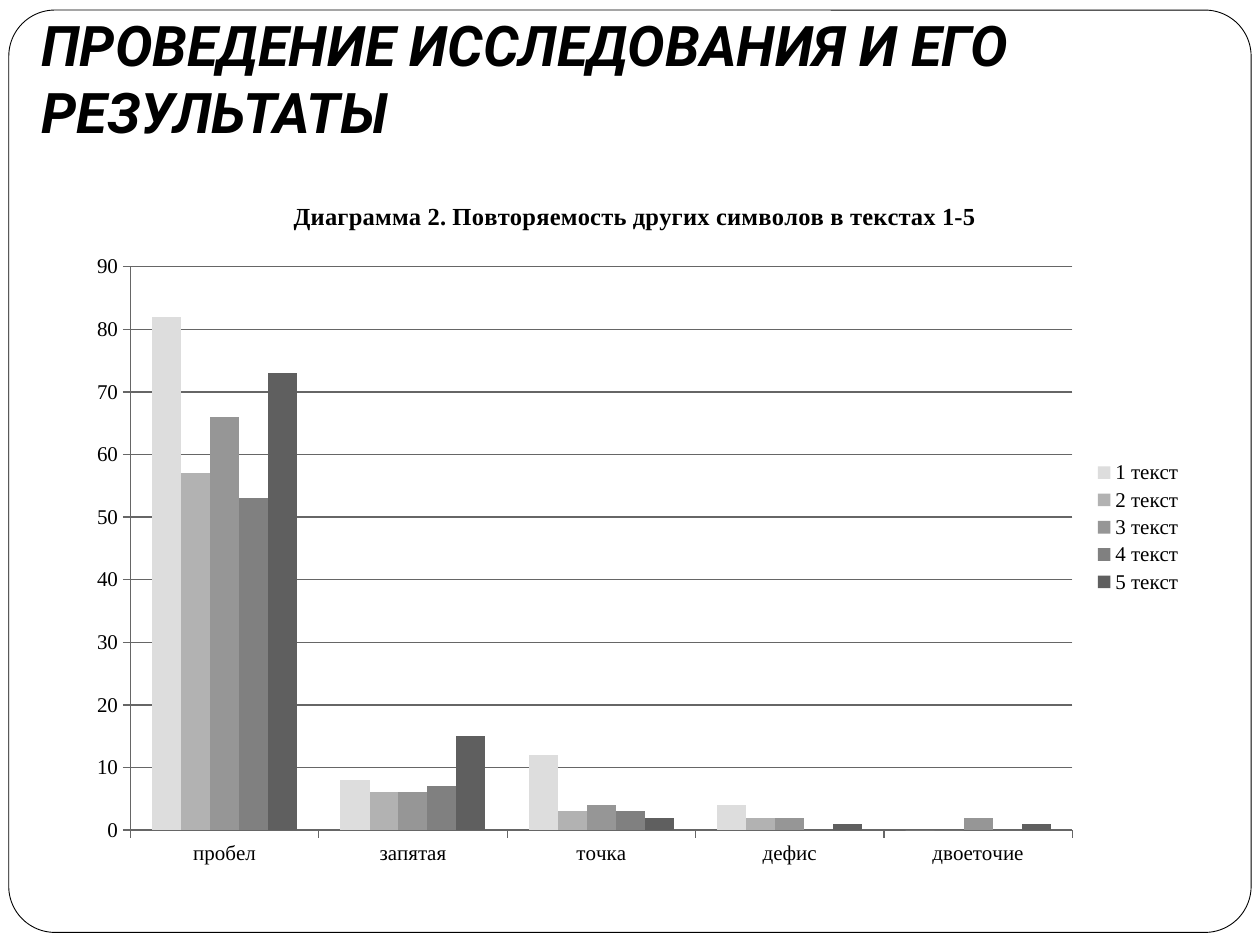
from lxml import etree
from pptx import Presentation
from pptx.chart.data import CategoryChartData as ChartData
from pptx.dml.color import RGBColor as RGB
from pptx.enum.chart import (XL_CHART_TYPE as Kind, XL_LEGEND_POSITION as Side,
                             XL_TICK_MARK as Tick)
from pptx.enum.shapes import MSO_SHAPE as Preset
from pptx.enum.text import MSO_ANCHOR as Anchor, MSO_AUTO_SIZE as Fit, PP_ALIGN as Align
from pptx.oxml.ns import qn
from pptx.util import Inches, Pt

# Content
TITLE = "ПРОВЕДЕНИЕ ИССЛЕДОВАНИЯ И ЕГО РЕЗУЛЬТАТЫ"
CAPTION = "Диаграмма 2. Повторяемость других символов в текстах 1-5"
SIGNS = ["пробел", "запятая", "точка", "дефис", "двоеточие"]
COUNTS = {
    "1 текст": (82, 8, 12, 4, 0),
    "2 текст": (57, 6, 3, 2, 0),
    "3 текст": (66, 6, 4, 2, 2),
    "4 текст": (53, 7, 3, 0, 0),
    "5 текст": (73, 15, 2, 1, 1),
}
THEME = {
    "ink": "000000", "paper": "FFFFFF", "grid": "666666",
    "bars": ["DDDDDD", "B2B2B2", "969696", "808080", "5F5F5F"],
    "head": "Roboto", "body": "Times New Roman",
    "title": 32, "caption": 14, "label": 12, "base": 10,
}
# Places: left, top, width, height
FRAME = (0.07, 0.08, 9.86, 7.32)
HEAD = (0.23, 0, 9.77, 1.25)
CHART = (0.59, 1.39, 8.9, 5.59)
PLOT = {"x": 0.05, "y": 0.13, "w": 0.84, "h": 0.8}  # shares of the chart area


def style(font, face=THEME["body"], size=THEME["label"], bold=False, italic=False):
    font.name, font.size, font.bold, font.italic = face, Pt(size), bold, italic
    font.color.rgb = RGB.from_string(THEME["ink"])


def write(frame, text, align=None, **form):
    para = frame.paragraphs[0]
    para.alignment = align
    run = para.add_run()
    run.text = text
    style(run.font, **form)


def draw(line, color, width):
    line.color.rgb = RGB.from_string(color)
    line.width = Pt(width)


def place(shape, box):
    shape.left, shape.top, shape.width, shape.height = map(Inches, box)


def fix_plot(chart):
    """Set the inner plot area by hand."""
    area = chart.element.find(".//" + qn("c:plotArea"))
    old = area.find(qn("c:layout"))
    if old is not None:
        area.remove(old)
    layout = etree.Element(qn("c:layout"))
    manual = etree.SubElement(layout, qn("c:manualLayout"))
    rules = {"layoutTarget": "inner", "xMode": "edge", "yMode": "edge", **PLOT}
    for name, val in rules.items():
        etree.SubElement(manual, qn("c:" + name)).set("val", str(val))
    area.insert(0, layout)


def add_chart(slide):
    data = ChartData()
    data.categories = SIGNS
    for name, vals in COUNTS.items():
        data.add_series(name, vals)
    chart = slide.shapes.add_chart(
        Kind.COLUMN_CLUSTERED, *map(Inches, CHART), data).chart
    style(chart.font, size=THEME["base"])
    chart.has_title = True
    write(chart.chart_title.text_frame, CAPTION, size=THEME["caption"], bold=True)
    chart.chart_title.include_in_layout = False

    # Bars
    plot = chart.plots[0]
    plot.gap_width, plot.overlap, plot.vary_by_categories = 150, 0, False
    for bar, color in zip(plot.series, THEME["bars"]):
        bar.format.fill.solid()
        bar.format.fill.fore_color.rgb = RGB.from_string(color)

    # Axes and legend
    for axis in (chart.category_axis, chart.value_axis):
        style(axis.tick_labels.font)
        axis.major_tick_mark, axis.minor_tick_mark = Tick.OUTSIDE, Tick.NONE
        draw(axis.format.line, THEME["grid"], 0.75)
    scale = chart.value_axis
    scale.minimum_scale, scale.maximum_scale, scale.major_unit = 0, 90, 10
    scale.has_major_gridlines = True
    draw(scale.major_gridlines.format.line, THEME["grid"], 0.75)
    chart.has_legend = True
    chart.legend.position = Side.RIGHT
    chart.legend.include_in_layout = False
    style(chart.legend.font)
    fix_plot(chart)


def main():
    deck = Presentation()
    deck.slide_width, deck.slide_height = Inches(10), Inches(7.5)
    slide = deck.slides.add_slide(deck.slide_layouts[5])

    # Title
    title = slide.shapes.title
    place(title, HEAD)
    text = title.text_frame
    text.word_wrap, text.auto_size = True, Fit.NONE
    text.vertical_anchor = Anchor.BOTTOM
    text.margin_left = text.margin_right = text.margin_bottom = Inches(0.1)
    text.margin_top = Inches(0.05)
    write(text, TITLE, Align.LEFT, face=THEME["head"], size=THEME["title"],
          bold=True, italic=True)

    # Rounded frame behind the title
    frame = slide.shapes.add_shape(Preset.ROUNDED_RECTANGLE, *map(Inches, FRAME))
    frame.adjustments[0] = 0.05
    frame.shadow.inherit = False
    frame.fill.solid()
    frame.fill.fore_color.rgb = RGB.from_string(THEME["paper"])
    draw(frame.line, THEME["ink"], 0.5)
    title.element.addprevious(frame.element)

    add_chart(slide)
    deck.save("out.pptx")


if __name__ == "__main__":
    main()
